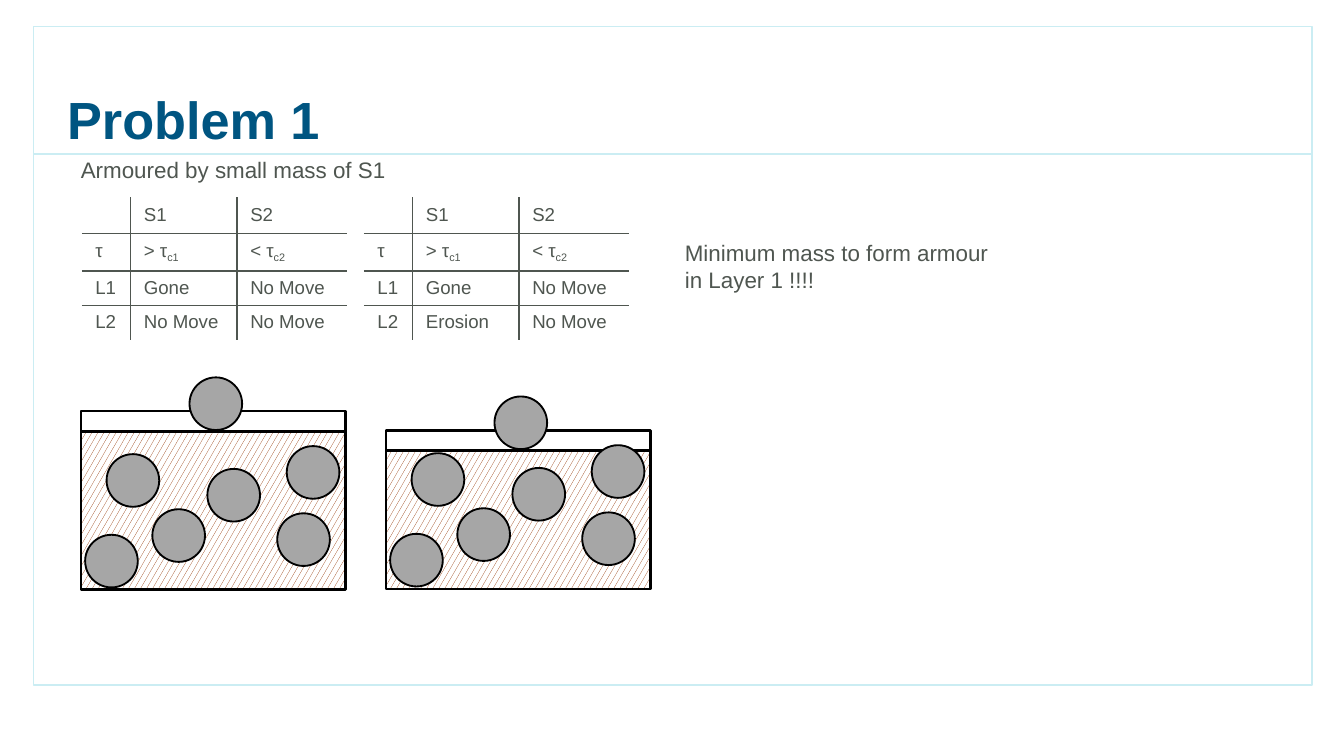
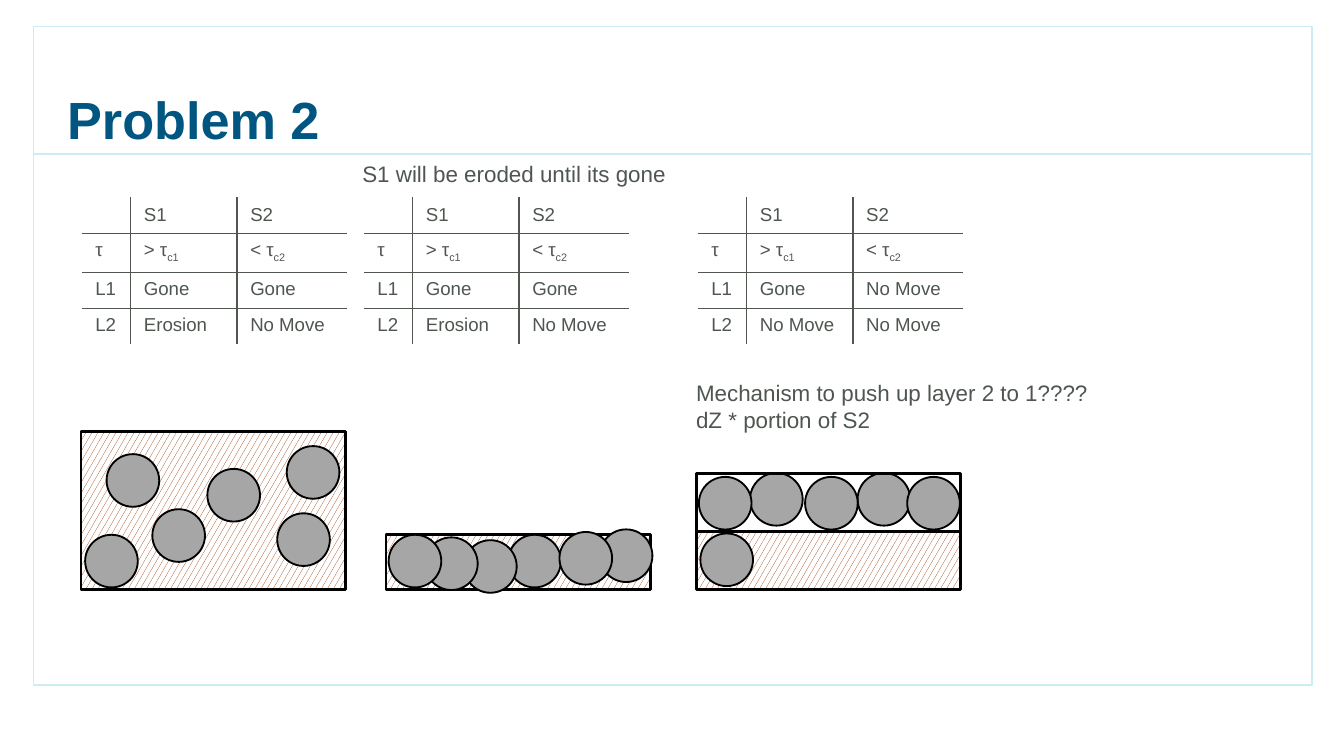
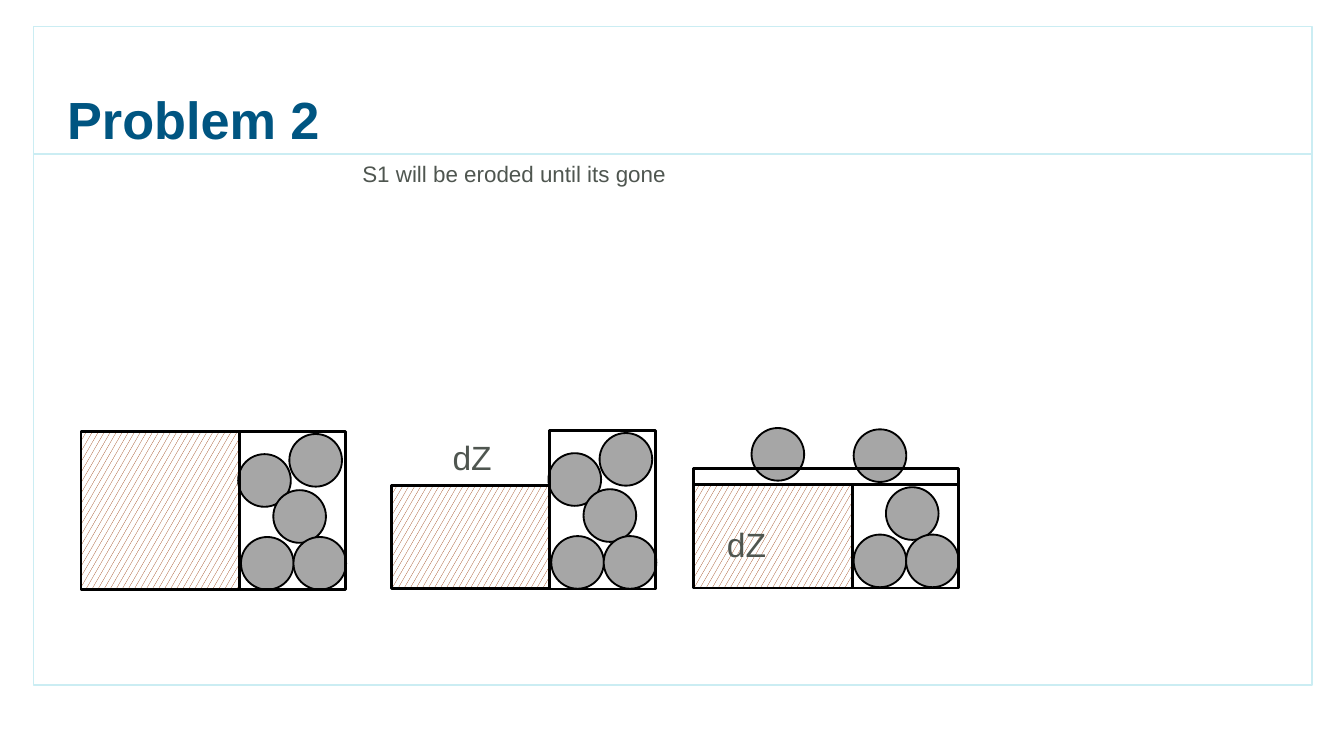
from lxml.etree import SubElement
from pptx import Presentation
from pptx.dml.color import RGBColor
from pptx.enum.dml import MSO_PATTERN
from pptx.enum.shapes import MSO_CONNECTOR, MSO_SHAPE
from pptx.enum.text import MSO_ANCHOR, MSO_AUTO_SIZE, PP_ALIGN
from pptx.oxml import parse_xml
from pptx.oxml.ns import nsdecls, qn
from pptx.util import Pt

FONT = "Arial"
TITLE_BLUE, FRAME_BLUE, TEXT_GREY = "005581", "CBEDF3", "4F5650"
SAND_BROWN, GRAIN_GREY, BLACK, WHITE = "943400", "A6A6A6", "000000", "FFFFFF"
NO_STYLE = "{2D5ABB26-0587-4C30-8999-92F81FD0307C}"

GRAIN = 28.2
BED_WIDTH, BED_HEIGHT = 141.8, 85
SAND_WIDTH = 85
COLUMN_WIDTHS = (26, 57, 59)
TABLE_TOP = 105.8
BED_LEFTS = (43.4, 206.8, 373)
BASE = 316

# Grain places: distance from the left of the bed, rise of the grain's top above its base
MIXED_BED = [(67.7, 64.8), (38.2, 43.2), (105.1, 41), (13.7, 72.7), (2.2, 29.5), (110.2, 77)]
ERODED_BED = [(65.5, 29.5), (41.8, 26.6), (114.5, 32.4), (20.9, 28.1), (1.4, 29.5), (92.9, 31)]
BACK_GRAINS = [(86.4, 62.6), (28.8, 62.6), (2.2, 30.2)]
FRONT_GRAINS = [(1.4, 60.5), (58.3, 60.5), (113, 60.5)]
GRAVEL = [(84.2, 72.7), (85.7, 28.3), (111.6, 83.5), (103, 53.4), (113.8, 28.3)]
SETTLED_GRAVEL = [(31, 85.7), (85.7, 28.6), (85.7, 85), (103, 54), (113.8, 28.6)]


def colour(hex_string):
    return RGBColor.from_string(hex_string)


def write(para, text, size, hex_string=TEXT_GREY, bold=False):
    """Write a line; what follows an underscore is set as a subscript."""
    normal, _, subscript = text.partition("_")
    for part, baseline in ((normal, None), (subscript, "-25000")):
        if not part:
            continue
        span = para.add_run()
        span.text = part
        span.font.name, span.font.size, span.font.bold = FONT, Pt(size), bold
        span.font.color.rgb = colour(hex_string)
        if baseline:
            span.font._element.set("baseline", baseline)


def add_figure(page, kind, left, top, width, height, line, weight):
    figure = page.shapes.add_shape(kind, Pt(left), Pt(top), Pt(width), Pt(height))
    figure.shadow.inherit = False
    figure.fill.background()
    figure.line.color.rgb = colour(line)
    figure.line.width = Pt(weight)
    return figure


def add_frame(page):
    left, top, width, height = 18, 14.2, 684.8, 353
    add_figure(page, MSO_SHAPE.RECTANGLE, left, top, width, height, FRAME_BLUE, 1)
    rule = page.shapes.add_connector(
        MSO_CONNECTOR.STRAIGHT, Pt(left), Pt(82.5), Pt(left + width), Pt(82.5))
    rule.line.color.rgb = colour(FRAME_BLUE)
    rule.line.width = Pt(1)
    SubElement(rule._element.spPr, qn("a:effectLst"))


def add_page(deck, heading):
    page = deck.slides.add_slide(deck.slide_layouts[5])
    add_frame(page)
    title = page.shapes.title
    title.left, title.top, title.width, title.height = Pt(36), Pt(18), Pt(648), Pt(62.6)
    frame = title.text_frame
    frame.margin_left = frame.margin_top = frame.margin_right = frame.margin_bottom = 0
    frame.vertical_anchor = MSO_ANCHOR.BOTTOM
    frame.auto_size = MSO_AUTO_SIZE.NONE
    frame.word_wrap = True
    frame.paragraphs[0].alignment = PP_ALIGN.LEFT
    write(frame.paragraphs[0], heading, 28, TITLE_BLUE, bold=True)
    return page


def add_note(page, left, top, width, height, lines, size=12, wrap=True):
    box = page.shapes.add_textbox(Pt(left), Pt(top), Pt(width), Pt(height))
    frame = box.text_frame
    frame.word_wrap = wrap
    frame.auto_size = MSO_AUTO_SIZE.SHAPE_TO_FIT_TEXT
    for index, line in enumerate(lines):
        para = frame.add_paragraph() if index else frame.paragraphs[0]
        write(para, line, size)


def set_borders(cell, sides):
    """Draw the given sides (L, R, T, B in this order) of a cell."""
    properties = cell._tc.get_or_add_tcPr()
    for index, side in enumerate(sides):
        properties.insert(index, parse_xml(
            f'<a:ln{side} {nsdecls("a")} w="12700"><a:solidFill>'
            f'<a:srgbClr val="{TEXT_GREY}"/></a:solidFill></a:ln{side}>'))


def add_motion_table(page, left, row_height, layer1, layer2):
    """Table of shear stress and movement of S1 and S2 in both layers."""
    rows = [("", "S1", "S2"), ("τ", "> τ_c1", "< τ_c2"), ("L1", *layer1), ("L2", *layer2)]
    table = page.shapes.add_table(4, 3, Pt(left), Pt(TABLE_TOP), Pt(sum(COLUMN_WIDTHS)),
                                  Pt(4 * row_height + 1.5)).table
    table.first_row = table.horz_banding = False
    table._tbl.tblPr.find(qn("a:tableStyleId")).text = NO_STYLE
    for column, width in zip(table.columns, COLUMN_WIDTHS):
        column.width = Pt(width)
    for row_index, words in enumerate(rows):
        table.rows[row_index].height = Pt(row_height + (1.5 if row_index == 1 else 0))
        for column_index, word in enumerate(words):
            cell = table.cell(row_index, column_index)
            cell.fill.background()
            para = cell.text_frame.paragraphs[0]
            write(para, word, 10)
            if not word:
                SubElement(para._p, qn("a:endParaRPr"), sz="1000")
            drawn = {"L": column_index == 1, "R": column_index == 0,
                     "T": row_index in (1, 2), "B": row_index in (0, 1)}
            set_borders(cell, [side for side in drawn if drawn[side]])


def add_layer(page, left, base, width, height, sandy=False):
    """Rectangle standing on its base, hatched if it is sandy."""
    layer = add_figure(page, MSO_SHAPE.RECTANGLE, left, base - height, width, height, BLACK, 1.5)
    if sandy:
        layer.fill.patterned()
        layer.fill.pattern = MSO_PATTERN.LARGE_CONFETTI
        layer.fill.fore_color.rgb = colour(SAND_BROWN)
        layer.fill.back_color.rgb = colour(WHITE)


def add_grains(page, left, base, places):
    for across, rise in places:
        grain = add_figure(page, MSO_SHAPE.OVAL, left + across, base - rise,
                           GRAIN, GRAIN, BLACK, 1)
        grain.fill.solid()
        grain.fill.fore_color.rgb = colour(GRAIN_GREY)


def add_armoured_bed(page, left, base, height, top_grain_rise):
    add_layer(page, left, base, BED_WIDTH, height, sandy=True)
    add_layer(page, left, base - height, BED_WIDTH, 10.8)
    add_grains(page, left, base, MIXED_BED + [(58.1, top_grain_rise)])


def add_split_bed(page, left, base, sand_height, gravel_height, grains):
    """Sand on the left, gravel on the right."""
    add_layer(page, left, base, SAND_WIDTH, sand_height, sandy=True)
    add_grains(page, left, base, grains)
    add_layer(page, left + SAND_WIDTH, base, BED_WIDTH - SAND_WIDTH, gravel_height)


def add_erosion_note(page):
    add_note(page, 187, 82.2, 186.5, 21.8, ["S1 will be eroded until its gone"])


def build_armouring(deck):
    page = add_page(deck, "Problem 1")
    add_motion_table(page, 43.9, 18.5, ("Gone", "No Move"), ("No Move", "No Move"))
    add_motion_table(page, 195, 18.5, ("Gone", "No Move"), ("Erosion", "No Move"))
    add_note(page, 36.2, 80, 186.5, 21.8, ["Armoured by small mass of S1"])
    add_note(page, 359.8, 124.6, 186.5, 36, ["Minimum mass to form armour in Layer 1 !!!!"])
    add_armoured_bed(page, BED_LEFTS[0], BASE, BED_HEIGHT, 113.8)
    add_armoured_bed(page, BED_LEFTS[1], BASE - 0.5, 74, 103.1)


def build_erosion(deck):
    page = add_page(deck, "Problem 2")
    add_erosion_note(page)
    for left in (43.9, 195):
        add_motion_table(page, left, 19.3, ("Gone", "Gone"), ("Erosion", "No Move"))
    add_motion_table(page, 373.9, 19.3, ("Gone", "No Move"), ("No Move", "No Move"))
    add_note(page, 365.8, 199.6, 226.8, 36,
             ["Mechanism to push up layer 2 to 1????", "dZ * portion of S2"])

    first, second, third = BED_LEFTS
    add_layer(page, first, BASE, BED_WIDTH, BED_HEIGHT, sandy=True)
    add_grains(page, first, BASE, MIXED_BED)
    add_layer(page, second, BASE, BED_WIDTH, 29.5, sandy=True)
    add_grains(page, second, BASE, ERODED_BED)
    add_layer(page, third, BASE, BED_WIDTH, 31, sandy=True)
    add_grains(page, third, BASE, BACK_GRAINS)
    add_layer(page, third, BASE - 31.4, BED_WIDTH, 31)
    add_grains(page, third, BASE, FRONT_GRAINS)


def build_separate_sizes(deck):
    page = add_page(deck, "Problem 2")
    add_erosion_note(page)
    eroded = 55.3
    add_split_bed(page, 43.4, BASE, BED_HEIGHT, BED_HEIGHT, GRAVEL)
    add_split_bed(page, 209.6, BASE - 0.5, eroded, BED_HEIGHT, GRAVEL)
    add_split_bed(page, 371.6, BASE - 1, eroded, eroded, SETTLED_GRAVEL)
    add_layer(page, 371.6, BASE - 1 - eroded, BED_WIDTH, 8.5)
    for left, top in ((235.4, 230.4), (382.3, 277.2)):
        add_note(page, left, top, 36, 29, ["dZ"], size=18, wrap=False)


def main():
    deck = Presentation()
    deck.slide_width, deck.slide_height = Pt(720), Pt(405)
    build_armouring(deck)
    build_erosion(deck)
    build_separate_sizes(deck)
    deck.save("out.pptx")


if __name__ == "__main__":
    main()
